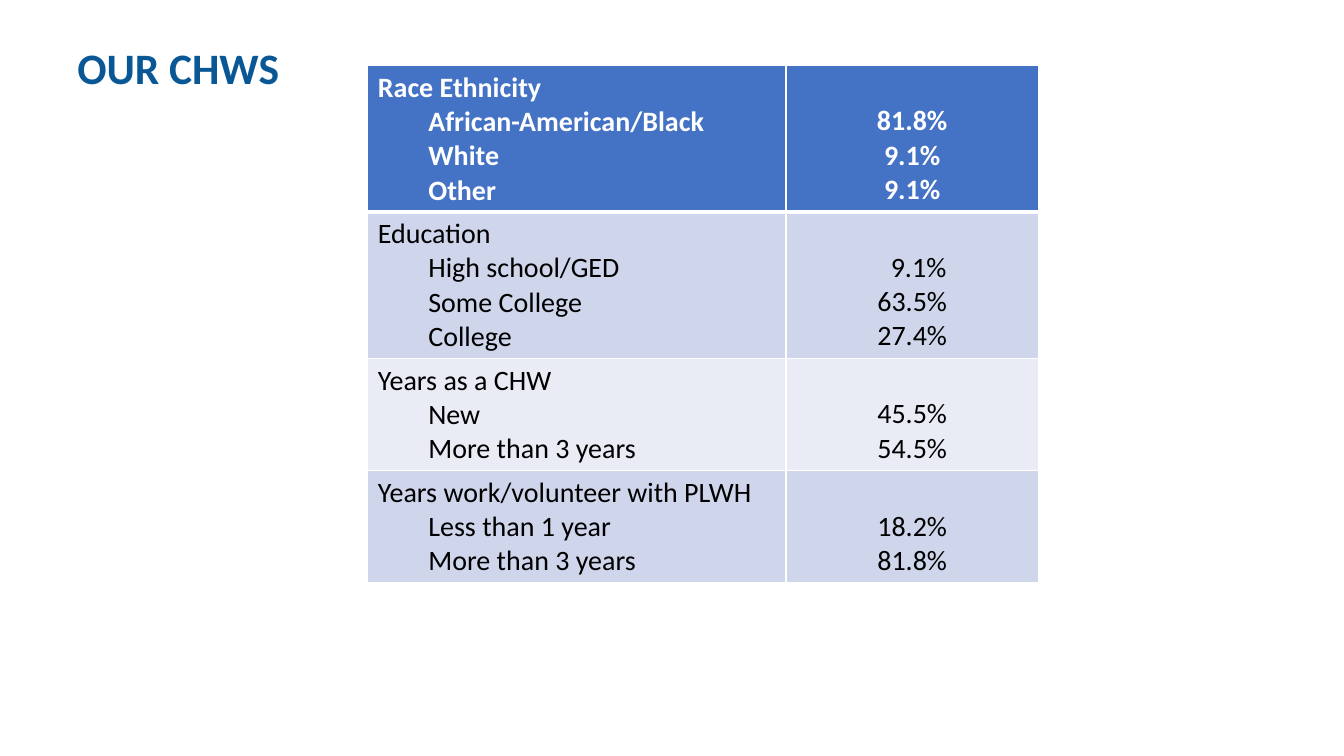
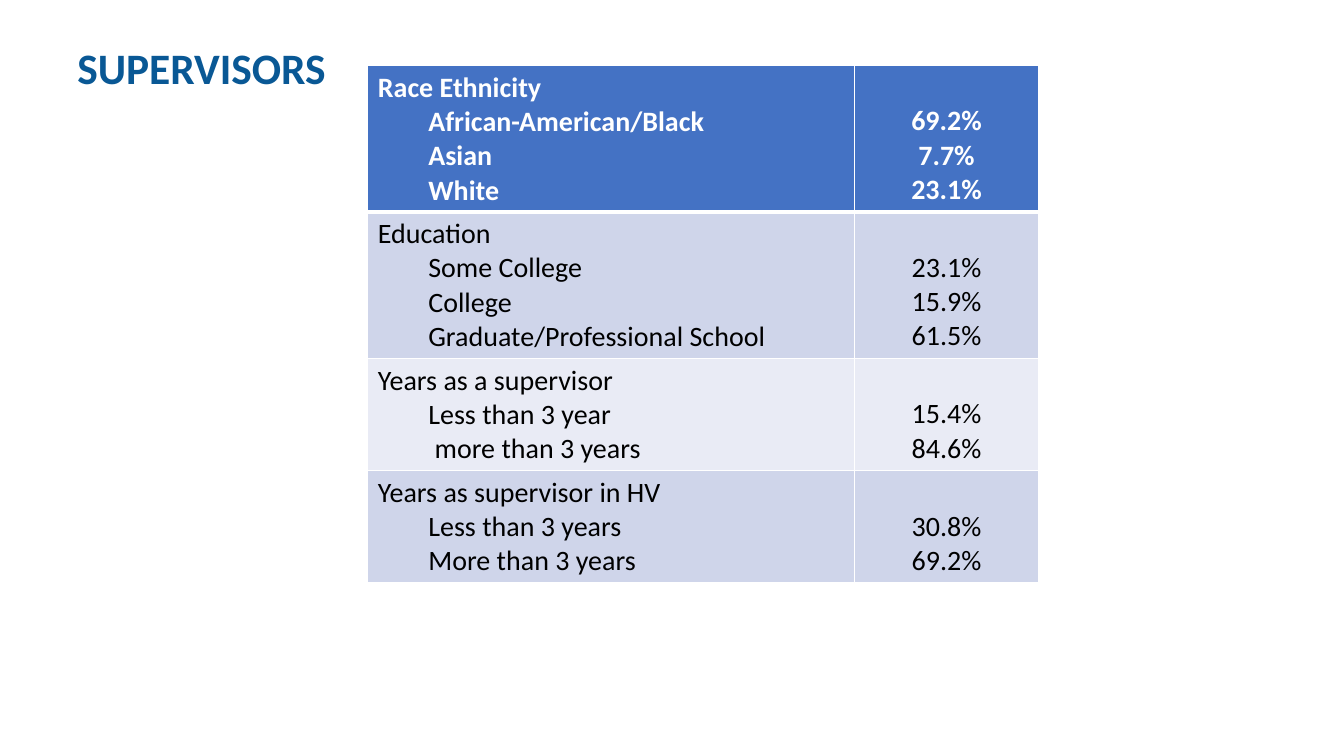
"""Two slides, each with a title and a demographic table."""
from lxml import etree
from pptx import Presentation
from pptx.dml.color import RGBColor
from pptx.enum import text
from pptx.oxml import ns
from pptx.util import Cm, Pt

COLORS = {"title": "095895", "header": "4472C4", "band": "CFD5EA",
          "light": "E9EBF5", "white": "FFFFFF", "black": "000000"}
FONT = "Calibri"
TABLE_WIDTH = 16.9
LINE_HEIGHT = 0.86
CELL_PADDING = 0.25
ITEM_INDENT = 1.27

SLIDES = [
    ("OUR CHWS", 10.54, [
        ("Race Ethnicity", [("African-American/Black", "81.8%"),
                            ("White", "9.1%"), ("Other", "9.1%")]),
        ("Education", [("High school/GED", "9.1%", 0.32),
                       ("Some College", "63.5%"), ("College", "27.4%")]),
        ("Years as a CHW", [("New", "45.5%"), ("More than 3 years", "54.5%")]),
        ("Years work/volunteer with PLWH", [("Less than 1 year", "18.2%"),
                                            ("More than 3 years", "81.8%")]),
    ]),
    ("SUPERVISORS", 12.27, [
        ("Race Ethnicity", [("African-American/Black", "69.2%"),
                            ("Asian", "7.7%"), ("White", "23.1%")]),
        ("Education", [("Some College", "23.1%"), ("College", "15.9%"),
                       ("Graduate/Professional School", "61.5%")]),
        ("Years as a supervisor", [("Less than 3 year", "15.4%"),
                                   (" more than 3 years", "84.6%")]),
        ("Years as supervisor in HV", [("Less than 3 years", "30.8%"),
                                       ("More than 3 years", "69.2%")]),
    ]),
]


def write_line(frame, index, words, size, color, bold, indent=0, align=text.PP_ALIGN.LEFT):
    paragraph = frame.add_paragraph() if index else frame.paragraphs[0]
    paragraph.alignment = align
    if indent:
        properties = paragraph._p.get_or_add_pPr()
        properties.set("marL", str(Cm(indent)))
        properties.set("indent", "0")
    run = paragraph.add_run()
    run.text = words
    run.font.name = FONT
    run.font.size = Pt(size)
    run.font.bold = bold
    run.font.color.rgb = RGBColor.from_string(COLORS[color])


def style_cell(cell, fill, top, bottom):
    properties = cell._tc.get_or_add_tcPr()
    for side, width in (("L", 1), ("R", 1), ("T", top), ("B", bottom)):
        border = etree.SubElement(properties, ns.qn(f"a:ln{side}"), w=str(Pt(width)))
        solid = etree.SubElement(border, ns.qn("a:solidFill"))
        etree.SubElement(solid, ns.qn("a:srgbClr"), val=COLORS["white"])
    cell.fill.solid()
    cell.fill.fore_color.rgb = RGBColor.from_string(COLORS[fill])


presentation = Presentation()
presentation.slide_width = Cm(33.87)
presentation.slide_height = Cm(19.05)

for title, label_width, groups in SLIDES:
    slide = presentation.slides.add_slide(presentation.slide_layouts[6])
    title_box = slide.shapes.add_textbox(Cm(1.7), Cm(0.1), Cm(30.48), Cm(3.18))
    title_box.text_frame.word_wrap = True
    title_box.text_frame.vertical_anchor = text.MSO_ANCHOR.MIDDLE
    write_line(title_box.text_frame, 0, title, 31, "title", True)

    heights = [LINE_HEIGHT * (len(items) + 1) + CELL_PADDING for heading, items in groups]
    table = slide.shapes.add_table(len(groups), 2, Cm(9.27), Cm(1.65),
                                   Cm(TABLE_WIDTH), Cm(sum(heights))).table
    table.columns[0].width = Cm(label_width)
    table.columns[1].width = Cm(TABLE_WIDTH - label_width)

    for row, (heading, items) in enumerate(groups):
        table.rows[row].height = Cm(heights[row])
        is_header = row == 0
        fill = "header" if is_header else ("band" if row % 2 else "light")
        color = "white" if is_header else "black"
        label_cell, value_cell = table.cell(row, 0), table.cell(row, 1)
        for cell in (label_cell, value_cell):
            style_cell(cell, fill, 3 if row == 1 else 1, 3 if is_header else 1)
        value_cell.vertical_anchor = text.MSO_ANCHOR.BOTTOM
        write_line(label_cell.text_frame, 0, heading, 20, color, is_header)
        for index, (label, value, *shift) in enumerate(items):
            write_line(label_cell.text_frame, index + 1, label, 20, color, is_header, ITEM_INDENT)
            write_line(value_cell.text_frame, index, value, 20, color, is_header,
                       sum(shift), text.PP_ALIGN.CENTER)

presentation.save("out.pptx")
